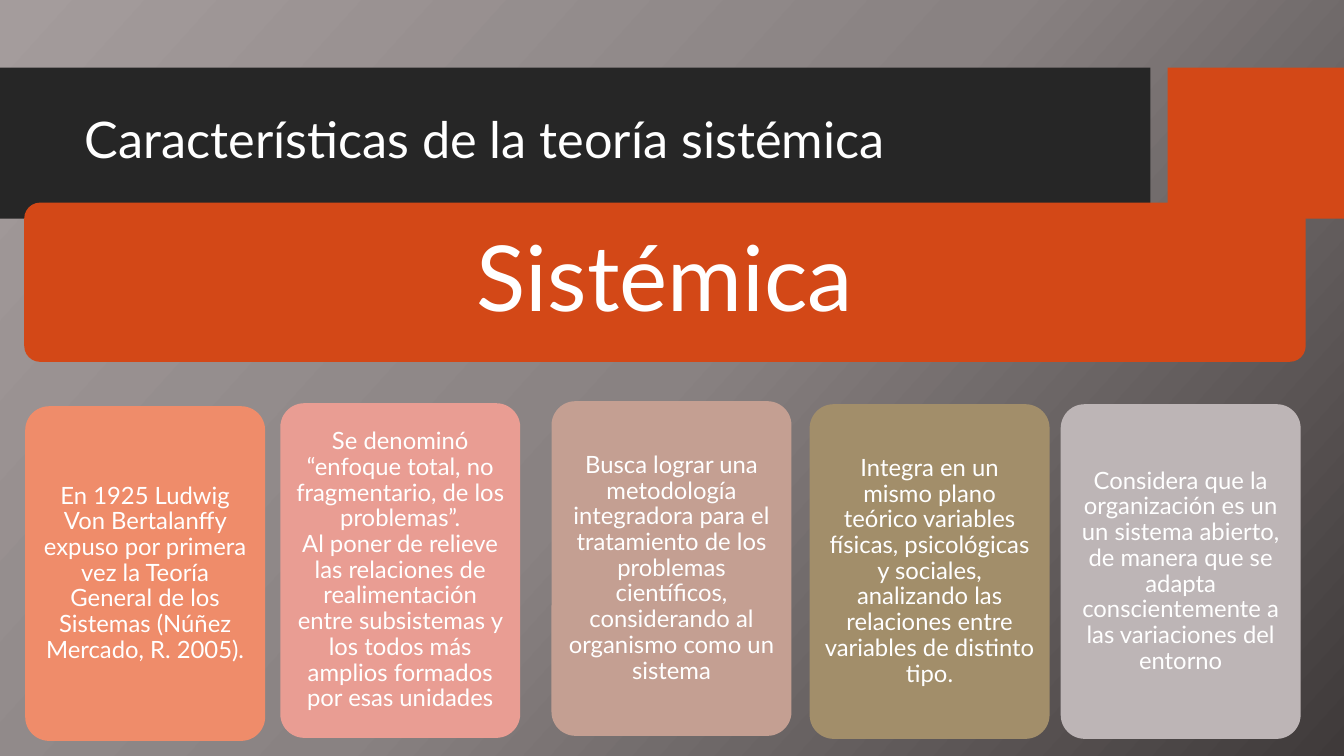
from copy import deepcopy

from pptx import Presentation
from pptx.dml.color import RGBColor
from pptx.enum.shapes import MSO_SHAPE
from pptx.enum.text import MSO_ANCHOR, PP_ALIGN
from pptx.oxml.ns import qn
from pptx.util import Pt

PX = 9144
FONT = "Lato"
WHITE = "FFFFFF"
DARK = "262626"
ORANGE = "D34817"
BACKGROUND_STOPS = [(0, "A49C9C"), (0.5, "898282"), (1, "3F3A3A")]
CARD_WIDTH, CARD_HEIGHT = 238, 332
CARDS = [
    (25, 403, "EF8C6A",
     "En 1925 Ludwig Von Bertalanffy expuso por primera vez la Teoría General "
     "de los Sistemas (Núñez Mercado, R. 2005)."),
    (278, 400, "E99D93",
     "Se denominó “enfoque total, no fragmentario, de los problemas”.\n"
     "Al poner de relieve las relaciones de realimentación entre subsistemas y "
     "los todos más\namplios formados por esas unidades"),
    (547, 398, "C49F92",
     "Busca lograr una metodología integradora para el tratamiento de los "
     "problemas científicos, considerando al organismo como un\nsistema"),
    (803, 401, "A28E6A",
     "Integra en un mismo plano teórico variables físicas, psicológicas y "
     "sociales, analizando las relaciones entre variables de distinto tipo."),
    (1052, 401, "BDB5B6",
     "Considera que la organización es un un sistema abierto, de manera que se "
     "adapta conscientemente a las variaciones del entorno"),
]


def color(value):
    return RGBColor.from_string(value)


def place(shape, left, top, width, height):
    shape.left, shape.top = left * PX, top * PX
    shape.width, shape.height = width * PX, height * PX


def write_text(shape, text, size, align=PP_ALIGN.CENTER, inset=(10, 5)):
    frame = shape.text_frame
    frame.word_wrap = True
    frame.vertical_anchor = MSO_ANCHOR.MIDDLE
    frame.margin_left = frame.margin_right = inset[0] * PX
    frame.margin_top = frame.margin_bottom = inset[1] * PX
    paragraph = frame.paragraphs[0]
    paragraph.text = text
    paragraph.alignment = align
    paragraph.line_spacing = 0.9
    for run in paragraph.runs:
        run.font.name = FONT
        run.font.size = Pt(size)
        run.font.color.rgb = color(WHITE)


def add_block(slide, kind, box, fill):
    shape = slide.shapes.add_shape(kind, *(length * PX for length in box))
    shape.shadow.inherit = False
    shape.fill.solid()
    shape.fill.fore_color.rgb = color(fill)
    shape.line.fill.background()
    return shape


def add_rounded(slide, box, fill, text, size, inset):
    shape = add_block(slide, MSO_SHAPE.ROUNDED_RECTANGLE, box, fill)
    shape.adjustments[0] = 0.1
    write_text(shape, text, size, inset=(inset, inset))


def paint_background(slide):
    fill = slide.background.fill
    fill.gradient()
    fill.gradient_angle = 318
    stop_list = slide.element.find(".//" + qn("a:gsLst"))
    stop_list.append(deepcopy(stop_list[-1]))
    for stop, (position, value) in zip(fill.gradient_stops, BACKGROUND_STOPS):
        stop.position = position
        stop.color.rgb = color(value)


def add_title_band(slide, left, top, width, height):
    accent_width, gap = 175, 17
    bar_width = width - accent_width - gap
    add_block(slide, MSO_SHAPE.RECTANGLE, (left, top, bar_width, height), DARK)
    add_block(slide, MSO_SHAPE.RECTANGLE,
              (left + bar_width + gap, top, accent_width, height), ORANGE)
    title = slide.shapes.title
    place(title, left + 74, top + 15, bar_width - 90, height - 32)
    write_text(title, "Características de la teoría sistémica", 36, PP_ALIGN.LEFT)
    title.element.getparent().append(title.element)


def add_cards(slide):
    for left, top, fill, text in CARDS:
        add_rounded(slide, (left, top, CARD_WIDTH, CARD_HEIGHT), fill, text, 17, 7)


def main():
    presentation = Presentation()
    presentation.slide_width, presentation.slide_height = 1333 * PX, 750 * PX
    slide = presentation.slides.add_slide(presentation.slide_layouts[5])
    paint_background(slide)
    add_title_band(slide, 0, 67, 1333, 150)
    add_rounded(slide, (24, 201, 1271, 158), ORANGE, "Sistémica", 65, 27)
    add_cards(slide)
    presentation.save("out.pptx")


if __name__ == "__main__":
    main()
